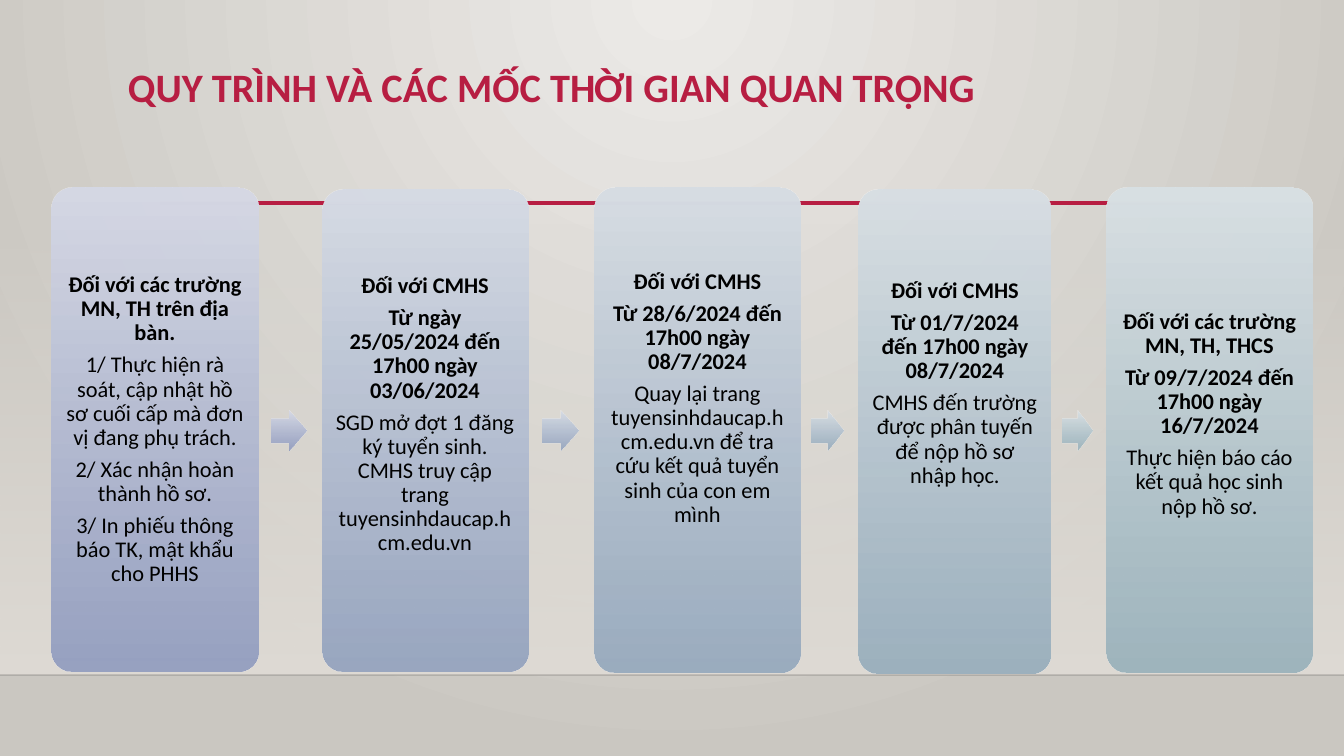
from lxml.etree import SubElement
from pptx import Presentation
from pptx.dml.color import RGBColor
from pptx.enum.shapes import MSO_CONNECTOR as LINE, MSO_SHAPE as KIND
from pptx.enum.text import MSO_ANCHOR as ANCHOR, PP_ALIGN as ALIGN
from pptx.oxml import parse_xml
from pptx.oxml.ns import nsdecls, qn
from pptx.util import Pt

SCALE = 914400 / 100.8
WIDE, HIGH = 1344, 756
RED = "B71E42"
PAD = 7
BLANK = 32

CARDS = [
    ((52, 188, 206, 484), "D6D9E5", "929DC0", 1, 0, [
        "Đối với các trường MN, TH trên địa bàn.",
        "1/ Thực hiện rà soát, cập nhật hồ sơ cuối cấp mà đơn vị đang phụ trách.",
        "2/ Xác nhận hoàn thành hồ sơ.",
        "3/ In phiếu thông báo TK, mật khẩu cho PHHS"]),
    ((322, 190, 206, 482), "D6DBE5", "94A3BF", 2, 1, [
        "Đối với CMHS",
        "Từ ngày 25/05/2024 đến 17h00 ngày 03/06/2024",
        "SGD mở đợt 1 đăng ký tuyển sinh. CMHS truy cập trang "
        "tuyensinhdaucap.hcm.edu.vn"]),
    ((595, 188, 205, 485), "D7DDE4", "96A9BE", 2, 2, [
        "Đối với CMHS",
        "Từ 28/6/2024 đến 17h00 ngày 08/7/2024",
        "Quay lại trang tuyensinhdaucap.hcm.edu.vn để tra cứu kết quả "
        "tuyển sinh của con em mình"]),
    ((859, 190, 192, 483), "D8DFE4", "98AEBD", 2, 3, [
        "Đối với CMHS",
        "Từ 01/7/2024 đến 17h00 ngày 08/7/2024",
        "CMHS đến trường được phân tuyến để nộp hồ sơ nhập học."]),
    ((1107, 188, 205, 485), "D9E1E4", "9AB2BC", 2, 1, [
        "Đối với các trường MN, TH, THCS",
        "Từ 09/7/2024 đến 17h00 ngày 16/7/2024",
        "Thực hiện báo cáo kết quả học sinh nộp hồ sơ."]),
]
ARROWS = [
    ((272, 411, 34, 39), "D6D9E5", "929DC0"),
    ((542, 411, 36, 39), "D7DCE5", "95A5BF"),
    ((812, 411, 32, 39), "D8DEE4", "97ACBD"),
    ((1063, 411, 30, 39), "D9E1E4", "9AB2BC"),
]


def px(n):
    """Turn pixels into EMU."""
    return round(n * SCALE)


def color(code):
    """Turn a hex string into a colour."""
    return RGBColor.from_string(code)


def fade(node, part):
    """Set the opacity of a colour element in percent."""
    SubElement(node, qn("a:alpha")).set("val", str(part * 1000))


def blend(fill, top, end):
    """Fill with two colours running downwards."""
    fill.gradient()
    fill.gradient_angle = 270
    for stop, code in zip(fill.gradient_stops, (top, end)):
        stop.color.rgb = color(code)


def block(slide, kind, box, top, end, parts):
    """Draw a shape with a fading fill and no outline."""
    shape = slide.shapes.add_shape(kind, *map(px, box))
    shape.shadow.inherit = False
    shape.line.fill.background()
    blend(shape.fill, top, end)
    for node, part in zip(shape.element.xpath(".//a:gs/a:srgbClr"), parts):
        if part < 100:
            fade(node, part)
    return shape


def rule(slide, left, right, y, code, width):
    """Draw a level line."""
    line = slide.shapes.add_connector(
        LINE.STRAIGHT, px(left), px(y), px(right), px(y))
    line.line.color.rgb = color(code)
    line.line.width = Pt(width)
    SubElement(line.element.spPr, qn("a:effectLst"))
    return line


def stage(slide):
    """Paint the backdrop, the floor and the two lines."""
    blend(slide.background.fill, "ECEAE7", "CAC7C1")
    lin = slide.element.xpath(".//p:bg//a:lin")[0]
    lin.getparent().replace(lin, parse_xml(
        f'<a:path {nsdecls("a")} path="circle"><a:fillToRect '
        'l="43000" t="0" r="43000" b="100000"/></a:path>'))
    block(slide, KIND.RECTANGLE, (0, 223, WIDE, 452),
          "DFDBD5", "DFDBD5", (0, 100))
    edge = rule(slide, 0, WIDE, 675, "000001", 1)
    fade(edge.element.xpath(".//a:ln//a:srgbClr")[0], 20)
    rule(slide, 160, 1220, 203, RED, 2.5)


def title(slide, box, text):
    """Write the heading."""
    frame = slide.shapes.add_textbox(*map(px, box)).text_frame
    frame.word_wrap = True
    para = frame.paragraphs[0]
    para.text = text
    para.line_spacing = 0.9
    font = para.font
    font.name, font.size, font.bold = "Calibri", Pt(28.8), True
    font.color.rgb = color(RED)


def card(slide, box, top, end, heads, lift, texts):
    """Draw one step whose first lines are bold, raised by lift lines."""
    shape = block(slide, KIND.ROUNDED_RECTANGLE, box, top, end, (100, 92))
    shape.adjustments[0] = 0.1
    frame = shape.text_frame
    frame.word_wrap = True
    frame.vertical_anchor = ANCHOR.MIDDLE
    frame.margin_left = frame.margin_right = frame.margin_top = px(PAD)
    frame.margin_bottom = px(PAD + BLANK * lift)
    for i, text in enumerate(texts):
        para = frame.add_paragraph() if i else frame.paragraphs[0]
        para.text = text
        para.alignment = ALIGN.CENTER
        para.line_spacing = 0.9
        para.space_after = Pt(5.6)
        font = para.font
        font.name, font.size, font.bold = "Calibri", Pt(16), i < heads
        font.color.rgb = color("000000")


def arrow(slide, box, top, end):
    """Draw the arrow between two steps."""
    shape = block(slide, KIND.RIGHT_ARROW, box, top, end, (100, 92))
    shape.adjustments[0] = 0.6
    shape.adjustments[1] = 0.5


def main():
    """Build and save the slide."""
    deck = Presentation()
    deck.slide_width, deck.slide_height = px(WIDE), px(HIGH)
    slide = deck.slides.add_slide(deck.slide_layouts[6])
    stage(slide)
    title(slide, (118, 63, 1159, 85),
          "QUY TRÌNH VÀ CÁC MỐC THỜI GIAN QUAN TRỌNG")
    for step in CARDS:
        card(slide, *step)
    for link in ARROWS:
        arrow(slide, *link)
    deck.save("out.pptx")


if __name__ == "__main__":
    main()
